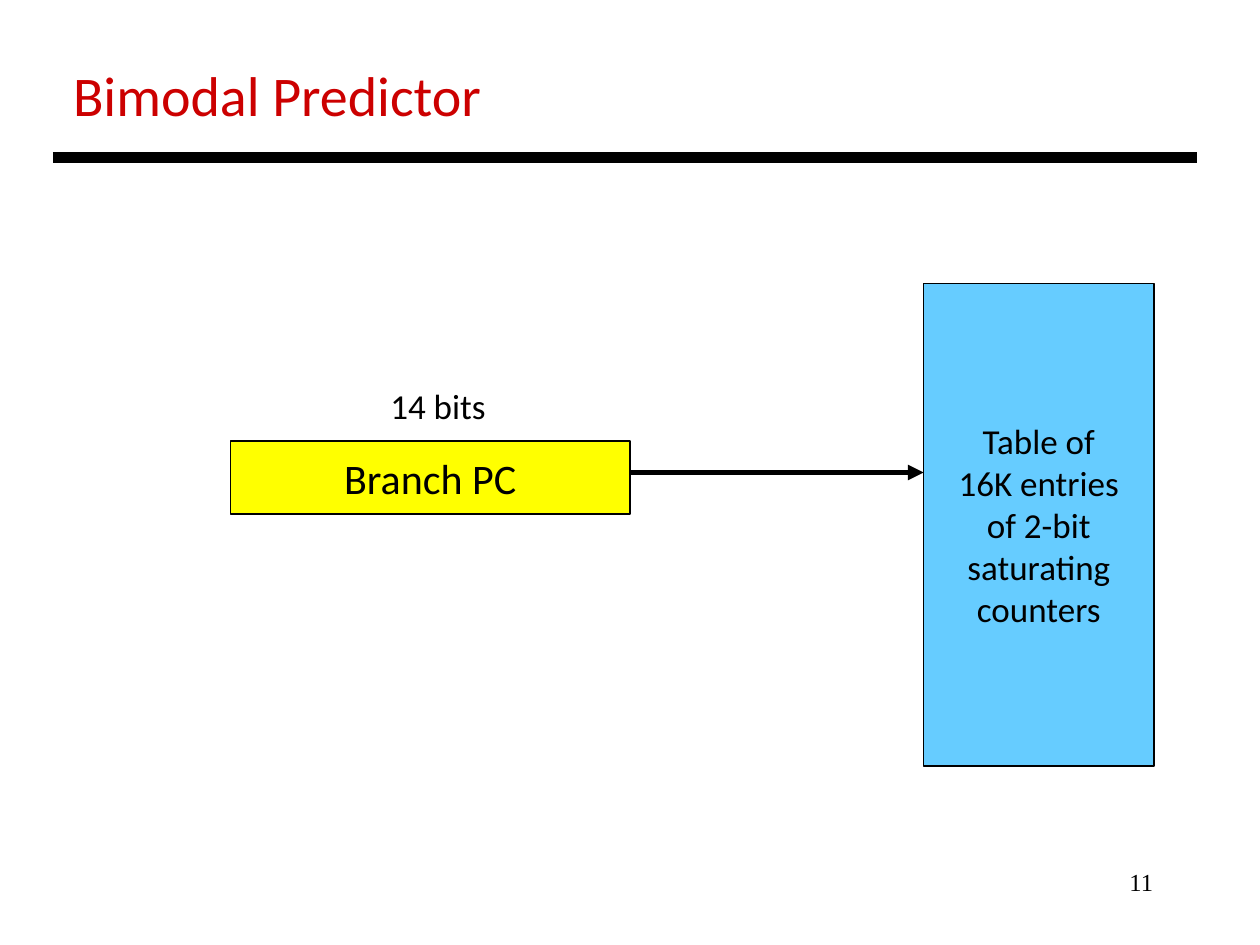
from lxml.etree import SubElement
from pptx import Presentation
from pptx.dml.color import RGBColor
from pptx.enum.shapes import MSO_CONNECTOR, MSO_SHAPE
from pptx.enum.text import MSO_ANCHOR, MSO_AUTO_SIZE, PP_ALIGN
from pptx.oxml.ns import qn
from pptx.util import Inches, Pt

# Content: positions are left, top, width, height in inches
TITLE = ("Bimodal Predictor", (0.48, 0.43, 3.48, 0.64))
BITS = ("14 bits", (3, 3, 0.97, 0.44))
NUMBER = ("11", (7.17, 6.83, 2.08, 0.5))
BRANCH = ("Branch PC", (1.83, 3.5, 3.17, 0.58))
TABLE = ("Table of\n16K entries\nof 2-bit\nsaturating\ncounters", (7.33, 2.25, 1.83, 3.83))
RULE = (0.42, 9.5, 1.25)
ARROW_Y = 3.75

THEME = dict(
    font="Calibri", number_font="Times New Roman",
    title="CC0000", ink="000000", branch="FFFF00", table="66CCFF",
    title_size=32, branch_size=24, body_size=20, number_size=14,
)


def write(shape, text, size, color=THEME["ink"], font=THEME["font"],
          align=PP_ALIGN.LEFT, anchor=MSO_ANCHOR.TOP, wrap=False):
    tf = shape.text_frame
    tf.text = text
    tf.word_wrap = wrap
    tf.auto_size = MSO_AUTO_SIZE.NONE
    tf.vertical_anchor = anchor
    for p in tf.paragraphs:
        p.alignment = align
        p.font.size = Pt(size)
        p.font.name = font
        p.font.color.rgb = RGBColor.from_string(color)


def add_text(s, item, size, **fmt):
    text, box = item
    write(s.shapes.add_textbox(*map(Inches, box)), text, size, **fmt)


def add_box(s, item, size, fill):
    text, box = item
    sp = s.shapes.add_shape(MSO_SHAPE.RECTANGLE, *map(Inches, box))
    sp.shadow.inherit = False
    sp.fill.solid()
    sp.fill.fore_color.rgb = RGBColor.from_string(fill)
    sp.line.color.rgb = RGBColor.from_string(THEME["ink"])
    sp.line.width = Pt(0.75)
    write(sp, text, size, align=PP_ALIGN.CENTER, anchor=MSO_ANCHOR.MIDDLE)


def add_line(s, x1, x2, y, width, arrow=False):
    line = s.shapes.add_connector(
        MSO_CONNECTOR.STRAIGHT, Inches(x1), Inches(y), Inches(x2), Inches(y))
    line.line.color.rgb = RGBColor.from_string(THEME["ink"])
    line.line.width = Pt(width)
    if arrow:
        SubElement(line.line._get_or_add_ln(), qn("a:tailEnd"), type="triangle")
    SubElement(line._element.spPr, qn("a:effectLst"))


def main():
    prs = Presentation()
    prs.slide_width, prs.slide_height = Inches(10), Inches(7.5)
    s = prs.slides.add_slide(prs.slide_layouts[5])

    # Title and rule
    title = s.shapes.title
    title.left, title.top, title.width, title.height = map(Inches, TITLE[1])
    write(title, TITLE[0], THEME["title_size"], color=THEME["title"])
    add_line(s, *RULE, width=6)

    # Branch PC indexes the counter table
    add_box(s, BRANCH, THEME["branch_size"], THEME["branch"])
    add_text(s, BITS, THEME["body_size"])
    add_box(s, TABLE, THEME["body_size"], THEME["table"])
    left, _, width, _ = BRANCH[1]
    add_line(s, left + width, TABLE[1][0], ARROW_Y, width=3, arrow=True)

    # Slide number
    add_text(s, NUMBER, THEME["number_size"], font=THEME["number_font"],
             align=PP_ALIGN.RIGHT, wrap=True)

    prs.save("out.pptx")


if __name__ == "__main__":
    main()
